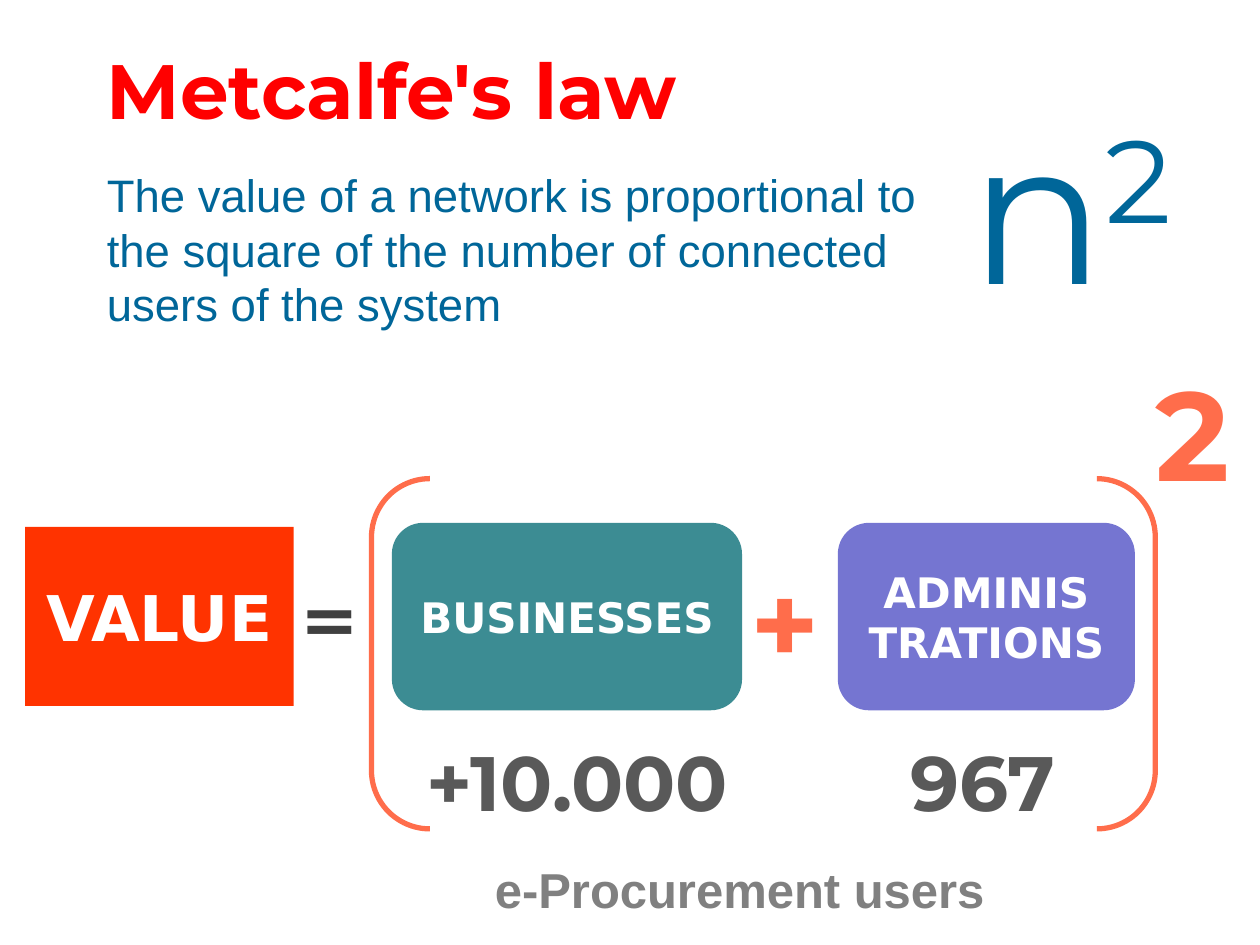
from dataclasses import dataclass

from lxml import etree
from pptx import Presentation
from pptx.dml.color import RGBColor
from pptx.enum.shapes import MSO_SHAPE
from pptx.enum.text import MSO_ANCHOR, MSO_AUTO_SIZE, PP_ALIGN
from pptx.oxml.ns import qn
from pptx.util import Cm, Pt

RECTANGLE, ROUNDED = MSO_SHAPE.RECTANGLE, MSO_SHAPE.ROUNDED_RECTANGLE
ELLIPSE, BRACKETS = MSO_SHAPE.OVAL, MSO_SHAPE.DOUBLE_BRACKET
LEFT, CENTER = PP_ALIGN.LEFT, PP_ALIGN.CENTER
TOP, MIDDLE = MSO_ANCHOR.TOP, MSO_ANCHOR.MIDDLE
NO_AUTOFIT = MSO_AUTO_SIZE.NONE


@dataclass(frozen=True)
class Style:
    font: str
    size: float
    color: str
    bold: bool = True


@dataclass(frozen=True)
class Theme:
    value_fill: str = "FF3300"
    business_fill: str = "3C8C93"
    administration_fill: str = "7575D1"
    accent: str = "FF6D4B"
    title: Style = Style("Montserrat", 44, "FF0000")
    body: Style = Style("Arial", 26, "006699", False)
    symbol: Style = Style("Montserrat", 115, "006699", False)
    value: Style = Style("DejaVu Sans", 36, "FFFFFF")
    term: Style = Style("DejaVu Sans", 24, "FFFFFF")
    equals: Style = Style("DejaVu Sans", 40, "404040")
    plus: Style = Style("Montserrat", 66, "FF6D4B")
    exponent: Style = Style("Montserrat", 72, "FF6D4B")
    count: Style = Style("Montserrat", 44, "595959")
    caption: Style = Style("Arial", 28, "808080")


THEME = Theme()


def place(shape, box, left, top, width, height):
    """Position a shape, in centimetres, relative to the box of its region."""
    shape.left, shape.top = Cm(box[0] + left), Cm(box[1] + top)
    shape.width, shape.height = Cm(width), Cm(height)


def write(shape, text, style, align=CENTER, anchor=MIDDLE, wrap=True):
    frame = shape.text_frame
    frame.text = text
    frame.word_wrap = wrap
    frame.auto_size = NO_AUTOFIT
    frame.vertical_anchor = anchor
    para = frame.paragraphs[0]
    para.alignment = align
    para.space_before = Pt(0)
    for span in para.runs:
        font = span.font
        font.name, font.size, font.bold = style.font, Pt(style.size), style.bold
        font.color.rgb = RGBColor.from_string(style.color)
    return para


def add_shape(page, box, kind, area, fill=None, line=None):
    shape = page.shapes.add_shape(kind, 0, 0, 0, 0)
    place(shape, box, *area)
    shape.shadow.inherit = False
    if fill:
        shape.fill.solid()
        shape.fill.fore_color.rgb = RGBColor.from_string(fill)
    else:
        shape.fill.background()
    if line:
        shape.line.color.rgb = RGBColor.from_string(line)
        shape.line.width = Pt(3)
    else:
        shape.line.fill.background()
    return shape


def add_label(page, box, area, text, style):
    label = page.shapes.add_textbox(0, 0, 0, 0)
    place(label, box, *area)
    return write(label, text, style)


def build_header(page, box):
    # Title
    title = page.shapes.title
    place(title, box, 0, 0, 17.6, 2)
    write(title, "Metcalfe's law", THEME.title, LEFT)

    # Statement of the law, without a bullet
    body = page.placeholders[1]
    place(body, box, 0, 2.6, 17.6, 4)
    body.text_frame.margin_top = 0
    para = write(body, "The value of a network is proportional to the square\u00a0of "
                 "the number of connected users of the system", THEME.body, LEFT, TOP)
    para.line_spacing = Pt(31)
    properties = para._p.get_or_add_pPr()
    properties.set("marL", "0")
    properties.set("indent", "0")
    etree.SubElement(properties, qn("a:buNone"))

    # n squared
    para = add_label(page, box, (16.79, 0.74, 5.79, 5.18), "n", THEME.symbol)
    para.add_run().text = "2"
    base, power = para.runs
    power.font.name, power.font.size = base.font.name, base.font.size
    power.font.bold = base.font.bold
    power.font.color.rgb = base.font.color.rgb
    power.font._element.set("baseline", "30000")


def build_formula(page, box):
    # Left side of the equation
    value = add_shape(page, box, RECTANGLE, (0, 2.7, 5.41, 3.61), THEME.value_fill)
    write(value, "VALUE", THEME.value)

    # Terms with their counts below
    terms = (
        ("BUSINESSES", 7.39, 7.06, THEME.business_fill, "+10.000", 7.39, 7.47),
        ("ADMINIS\vTRATIONS", 16.38, 5.99, THEME.administration_fill, "967", 15.8, 7.01),
    )
    for name, left, width, fill, count, count_left, count_width in terms:
        term = add_shape(page, box, ROUNDED, (left, 2.62, width, 3.78), fill)
        write(term, name, THEME.term, wrap=False)
        add_label(page, box, (count_left, 6.81, count_width, 2.01), count, THEME.count)

    # Brackets around the terms
    add_shape(page, box, BRACKETS, (6.98, 1.73, 15.8, 7.06), line=THEME.accent)

    # Operators
    for text, left, top, style in (
        ("=", 5.26, 3.74, THEME.equals),
        ("+", 14.45, 3.81, THEME.plus),
        ("2", 22.65, 0, THEME.exponent),
    ):
        sign = add_shape(page, box, ELLIPSE, (left, top, 1.75, 1.55))
        write(sign, text, style, wrap=False)

    # Caption
    add_label(page, box, (8.2, 9, 12.4, 2.01), "e-Procurement users", THEME.caption)


def main():
    deck = Presentation()
    deck.slide_width, deck.slide_height = Cm(25.4), Cm(19.05)
    page = deck.slides.add_slide(deck.slide_layouts[1])
    build_header(page, (1.9, 0.78))
    build_formula(page, (0.51, 7.92))
    deck.save("out.pptx")


if __name__ == "__main__":
    main()
